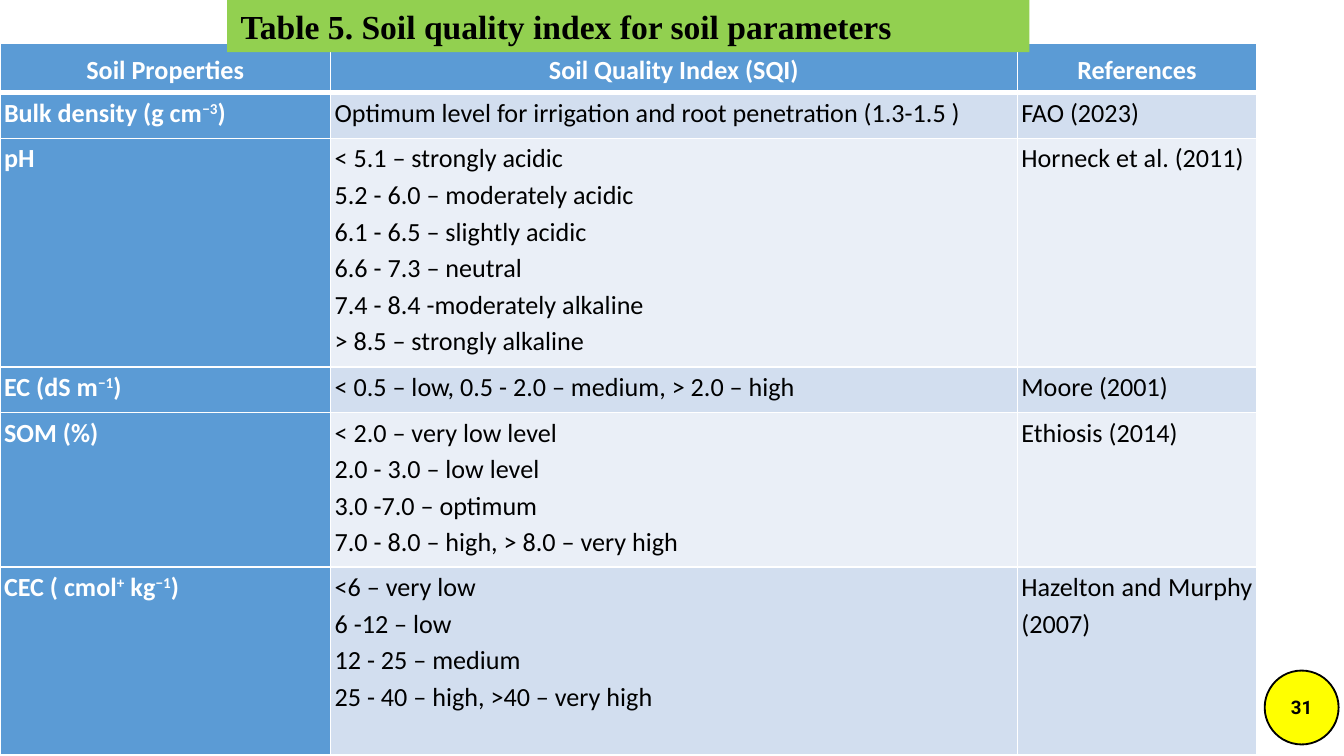
from dataclasses import dataclass

from lxml import etree
from pptx import Presentation
from pptx.dml.color import RGBColor
from pptx.enum.shapes import MSO_SHAPE
from pptx.enum.text import MSO_ANCHOR, MSO_AUTO_SIZE, PP_ALIGN
from pptx.oxml.ns import qn
from pptx.util import Inches, Pt

OVAL = MSO_SHAPE.OVAL
MIDDLE, TOP = MSO_ANCHOR.MIDDLE, MSO_ANCHOR.TOP
LEFT, CENTER, JUSTIFY = PP_ALIGN.LEFT, PP_ALIGN.CENTER, PP_ALIGN.JUSTIFY
NO_AUTOFIT = MSO_AUTO_SIZE.NONE
TITLE_ONLY = 5


@dataclass(frozen=True)
class Theme:
    white: str = "FFFFFF"
    black: str = "000000"
    header: str = "5B9BD5"
    bands: tuple = ("D2DEEF", "EAEFF7")
    banner: str = "92D050"
    badge: str = "FFFF00"
    table_font: str = "Calibri"
    title_font: str = "Times New Roman"
    badge_font: str = "Roboto"
    table_size: int = 14
    title_size: int = 18
    badge_size: int = 10
    border: int = 1
    header_border: int = 3


THEME = Theme()
# Widescreen, 16:9
WIDTH = Inches(10)
HEIGHT = WIDTH * 9 // 16

# Grid in inches
COLUMNS = (2.46, 5.11, 1.78)
ROWS = (0.37, 0.34, 1.7, 0.34, 1.15, 1.4)
TABLE_TOP = 0.32

TITLE = "Table 5. Soil quality index for soil parameters"
HEADINGS = ("Soil Properties", "Soil Quality Index (SQI)", "References")
# Text between carets is superscript; each line is a paragraph
SOIL_ROWS = (
    ("Bulk density (g cm^−3^)",
     "Optimum level for irrigation and root penetration (1.3-1.5 )",
     "FAO (2023)"),
    ("pH",
     "< 5.1 – strongly acidic\n5.2 - 6.0 – moderately acidic\n"
     "6.1 - 6.5 – slightly acidic\n6.6 - 7.3 – neutral\n"
     "7.4 - 8.4 -moderately alkaline\n> 8.5 – strongly alkaline",
     "Horneck et al. (2011)"),
    ("EC (dS m^−1^)",
     "< 0.5 – low, 0.5 - 2.0 – medium, > 2.0 – high",
     "Moore (2001)"),
    ("SOM (%)",
     "< 2.0 – very low level\n2.0 - 3.0 – low level\n"
     "3.0 -7.0 – optimum\n7.0 - 8.0 – high, > 8.0 – very high",
     "Ethiosis (2014)"),
    ("CEC ( cmol^+^ kg^−1^)",
     "<6 – very low\n6 -12 – low\n12 - 25 – medium\n"
     "25 - 40 – high, >40 – very high",
     "Hazelton and Murphy (2007)"),
)


def paint(fill, color):
    fill.solid()
    fill.fore_color.rgb = RGBColor.from_string(color)


def set_font(paragraph, name, size, color, bold):
    font = paragraph.font
    font.name, font.size, font.bold = name, Pt(size), bold
    font.color.rgb = RGBColor.from_string(color)


def add_runs(paragraph, text):
    for position, part in enumerate(text.split("^")):
        run = paragraph.add_run()
        run.text = part
        if position % 2:
            run._r.get_or_add_rPr().set("baseline", "30000")


def add_border(cell, side, points):
    line = etree.SubElement(cell._tc.get_or_add_tcPr(), qn(f"a:ln{side}"),
                            w=str(Pt(points)))
    fill = etree.SubElement(line, qn("a:solidFill"))
    etree.SubElement(fill, qn("a:srgbClr"), val=THEME.white)


def fill_cell(cell, text, row, column):
    is_header = row == 0
    is_label = is_header or column == 0

    # Borders come before the fill in the cell properties
    top = THEME.header_border if row == 1 else THEME.border
    bottom = THEME.header_border if is_header else THEME.border
    for side, points in (("L", THEME.border), ("R", THEME.border),
                         ("T", top), ("B", bottom)):
        add_border(cell, side, points)
    paint(cell.fill, THEME.header if is_label else THEME.bands[(row - 1) % 2])

    cell.margin_left = cell.margin_right = Inches(0.03)
    cell.margin_top = cell.margin_bottom = 0
    cell.vertical_anchor = MIDDLE if is_header else TOP
    frame = cell.text_frame
    for index, line in enumerate(text.split("\n")):
        paragraph = frame.add_paragraph() if index else frame.paragraphs[0]
        paragraph.alignment = CENTER if is_header else JUSTIFY
        paragraph.line_spacing = 1.15
        add_runs(paragraph, line)
        set_font(paragraph, THEME.table_font, THEME.table_size,
                 THEME.white if is_label else THEME.black, is_label)


def add_soil_table(slide):
    frame = slide.shapes.add_table(
        len(ROWS), len(COLUMNS), 0, Inches(TABLE_TOP),
        Inches(sum(COLUMNS)), Inches(sum(ROWS)))
    table = frame.table
    for column, width in zip(table.columns, COLUMNS):
        column.width = Inches(width)
    for row, height in zip(table.rows, ROWS):
        row.height = Inches(height)
    for row, texts in enumerate((HEADINGS, *SOIL_ROWS)):
        for column, text in enumerate(texts):
            fill_cell(table.cell(row, column), text, row, column)
    return frame


def place_title(slide, table_frame):
    title = slide.shapes.title
    title.left, title.top = int(WIDTH * 0.169), 0
    title.width, title.height = int(WIDTH * 0.597), int(HEIGHT * 0.069)
    paint(title.fill, THEME.banner)
    frame = title.text_frame
    frame.auto_size = NO_AUTOFIT
    frame.vertical_anchor = MIDDLE
    frame.text = TITLE
    paragraph = frame.paragraphs[0]
    paragraph.alignment = LEFT
    set_font(paragraph, THEME.title_font, THEME.title_size, THEME.black, True)
    # The banner overlaps the table's top edge
    table_frame.element.addnext(title.element)


def add_page_badge(slide, number):
    diameter = int(WIDTH * 0.055)
    badge = slide.shapes.add_shape(
        OVAL, int(WIDTH * 0.941), int(HEIGHT * 0.887), diameter, diameter)
    badge.shadow.inherit = False
    paint(badge.fill, THEME.badge)
    paint(badge.line.fill, THEME.black)
    badge.line.width = Pt(1)
    frame = badge.text_frame
    frame.margin_left = frame.margin_right = 0
    frame.vertical_anchor = MIDDLE
    frame.text = number
    paragraph = frame.paragraphs[0]
    paragraph.alignment = CENTER
    set_font(paragraph, THEME.badge_font, THEME.badge_size, THEME.black, True)


def main():
    presentation = Presentation()
    presentation.slide_width, presentation.slide_height = WIDTH, HEIGHT
    slide = presentation.slides.add_slide(
        presentation.slide_layouts[TITLE_ONLY])
    paint(slide.background.fill, THEME.white)

    add_page_badge(slide, "31")
    table_frame = add_soil_table(slide)
    place_title(slide, table_frame)
    presentation.save("out.pptx")


if __name__ == "__main__":
    main()
